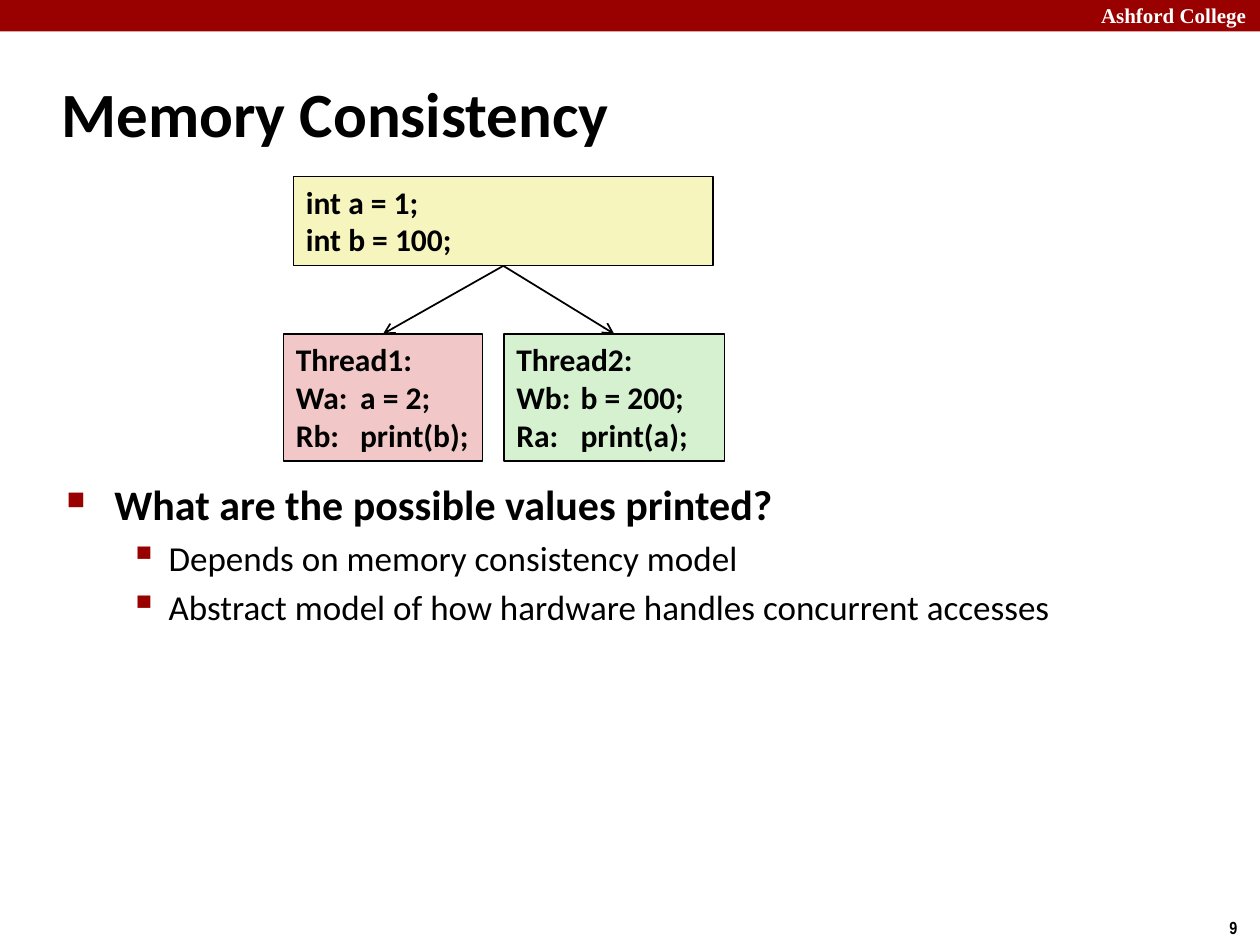
from dataclasses import dataclass

from lxml import etree
from pptx import Presentation
from pptx import util as u
from pptx.dml.color import RGBColor
from pptx.enum import shapes, text
from pptx.oxml.ns import qn


@dataclass(frozen=True)
class Theme:
    accent: str = "990000"
    ink: str = "000000"
    paper: str = "FFFFFF"
    shared: str = "F6F5BD"
    first: str = "F1C7C7"
    second: str = "D5F1CF"
    body_font: str = "Calibri"
    header_font: str = "Times New Roman"
    number_font: str = "Arial Narrow"
    title_size: int = 36
    point_size: int = 24
    detail_size: int = 20
    code_size: int = 18
    header_size: int = 12
    number_size: int = 10


@dataclass(frozen=True)
class Area:
    left: float
    top: float
    width: float
    height: float

    def inches(self) -> list[u.Length]:
        return [u.Inches(v) for v in (self.left, self.top, self.width, self.height)]


@dataclass(frozen=True)
class CodeBox:
    area: Area
    fill: str
    lines: tuple[str, ...]


@dataclass(frozen=True)
class Level:
    size: int
    bold: bool
    margin: float
    hanging: float
    mark: str
    mark_percent: int


@dataclass(frozen=True)
class Point:
    level: Level
    words: str


THEME = Theme()
CODE_TAB = 0.51

SHARED = CodeBox(Area(2.33, 1.4, 3.33, 0.71), THEME.shared,
                 ("int a = 1;", "int b = 100;"))
THREADS = (
    CodeBox(Area(2.25, 2.65, 1.58, 1.01), THEME.first,
            ("Thread1:", "Wa:\ta = 2;", "Rb: \tprint(b);")),
    CodeBox(Area(4, 2.65, 1.75, 1.01), THEME.second,
            ("Thread2:", "Wb:\tb = 200;", "Ra:\tprint(a);")),
)

MAIN = Level(THEME.point_size, True, 0.38, 0.38, "■", 60)
DETAIL = Level(THEME.detail_size, False, 0.81, 0.31, "▪", 110)
POINTS = (
    Point(MAIN, "What are the possible values printed?"),
    Point(DETAIL, "Depends on memory consistency model"),
    Point(DETAIL, "Abstract model of how hardware handles concurrent accesses"),
)


def color(value: str) -> RGBColor:
    return RGBColor.from_string(value)


def style(paragraph, size: int, ink: str = THEME.ink,
          face: str = THEME.body_font, bold: bool = True) -> None:
    font = paragraph.font
    font.name, font.size, font.bold = face, u.Pt(size), bold
    font.color.rgb = color(ink)


def add_label(slide, area: Area, words: str, size: int, wrap: bool = True,
              anchor=text.MSO_ANCHOR.TOP, **look: str) -> None:
    frame = slide.shapes.add_textbox(*area.inches()).text_frame
    frame.word_wrap = wrap
    frame.vertical_anchor = anchor
    frame.text = words
    style(frame.paragraphs[0], size, **look)


def add_rectangle(slide, area: Area, fill: str):
    rectangle = slide.shapes.add_shape(shapes.MSO_SHAPE.RECTANGLE, *area.inches())
    rectangle.shadow.inherit = False
    rectangle.fill.solid()
    rectangle.fill.fore_color.rgb = color(fill)
    rectangle.line.fill.background()
    return rectangle


def add_code(slide, box: CodeBox):
    rectangle = add_rectangle(slide, box.area, box.fill)
    rectangle.line.color.rgb = color(THEME.ink)
    rectangle.line.width = u.Pt(0.75)
    frame = rectangle.text_frame
    frame.word_wrap = True
    frame.vertical_anchor = text.MSO_ANCHOR.TOP
    frame.text = "\n".join(box.lines)
    for paragraph in frame.paragraphs:
        paragraph.alignment = text.PP_ALIGN.LEFT
        style(paragraph, THEME.code_size)
        properties = paragraph._p.get_or_add_pPr()
        tabs = etree.Element(qn("a:tabLst"))
        etree.SubElement(tabs, qn("a:tab"), pos=str(u.Inches(CODE_TAB)), algn="l")
        properties.find(qn("a:defRPr")).addprevious(tabs)
    return rectangle


def add_arrow(slide, source, target) -> None:
    arrow = slide.shapes.add_connector(
        shapes.MSO_CONNECTOR.STRAIGHT,
        source.left + source.width // 2, source.top + source.height,
        target.left + target.width // 2, target.top)
    arrow.line.color.rgb = color(THEME.ink)
    arrow.line.width = u.Pt(1)
    etree.SubElement(arrow.line._get_or_add_ln(), qn("a:tailEnd"), type="arrow")
    etree.SubElement(arrow._element.spPr, qn("a:effectLst"))


def add_bullet(paragraph, level: Level) -> None:
    properties = paragraph._p.get_or_add_pPr()
    properties.set("marL", str(u.Inches(level.margin)))
    properties.set("indent", str(-u.Inches(level.hanging)))
    tint = etree.Element(qn("a:buClr"))
    etree.SubElement(tint, qn("a:srgbClr"), val=THEME.accent)
    scale = etree.Element(qn("a:buSzPct"), val=str(level.mark_percent * 1000))
    mark = etree.Element(qn("a:buChar"), char=level.mark)
    for part in (tint, scale, mark):
        properties.find(qn("a:defRPr")).addprevious(part)


def add_points(slide, area: Area, points: tuple[Point, ...]) -> None:
    frame = slide.shapes.add_textbox(*area.inches()).text_frame
    frame.word_wrap = True
    frame.text = "\n".join(point.words for point in points)
    for paragraph, point in zip(frame.paragraphs, points):
        level = point.level
        paragraph.level = int(level is DETAIL)
        paragraph.space_before = u.Pt(level.size * 0.2)
        style(paragraph, level.size, bold=level.bold)
        add_bullet(paragraph, level)


def main() -> None:
    deck = Presentation()
    deck.slide_width, deck.slide_height = u.Inches(10), u.Inches(7.5)
    slide = deck.slides.add_slide(deck.slide_layouts[6])

    add_rectangle(slide, Area(0, 0, 10, 0.25), THEME.accent)
    add_label(slide, Area(8.64, -0.03, 1.43, 0.3), "Ashford College",
              THEME.header_size, ink=THEME.paper, face=THEME.header_font)
    add_label(slide, Area(9.66, 7.23, 0.34, 0.27), "9",
              THEME.number_size, wrap=False, face=THEME.number_font)
    add_label(slide, Area(0.39, 0.48, 8.3, 0.83), "Memory Consistency",
              THEME.title_size, anchor=text.MSO_ANCHOR.MIDDLE)
    add_points(slide, Area(0.43, 3.75, 8.64, 3.18), POINTS)

    shared = add_code(slide, SHARED)
    threads = [add_code(slide, box) for box in THREADS]
    for thread in threads:
        add_arrow(slide, shared, thread)

    deck.save("out.pptx")


if __name__ == "__main__":
    main()
